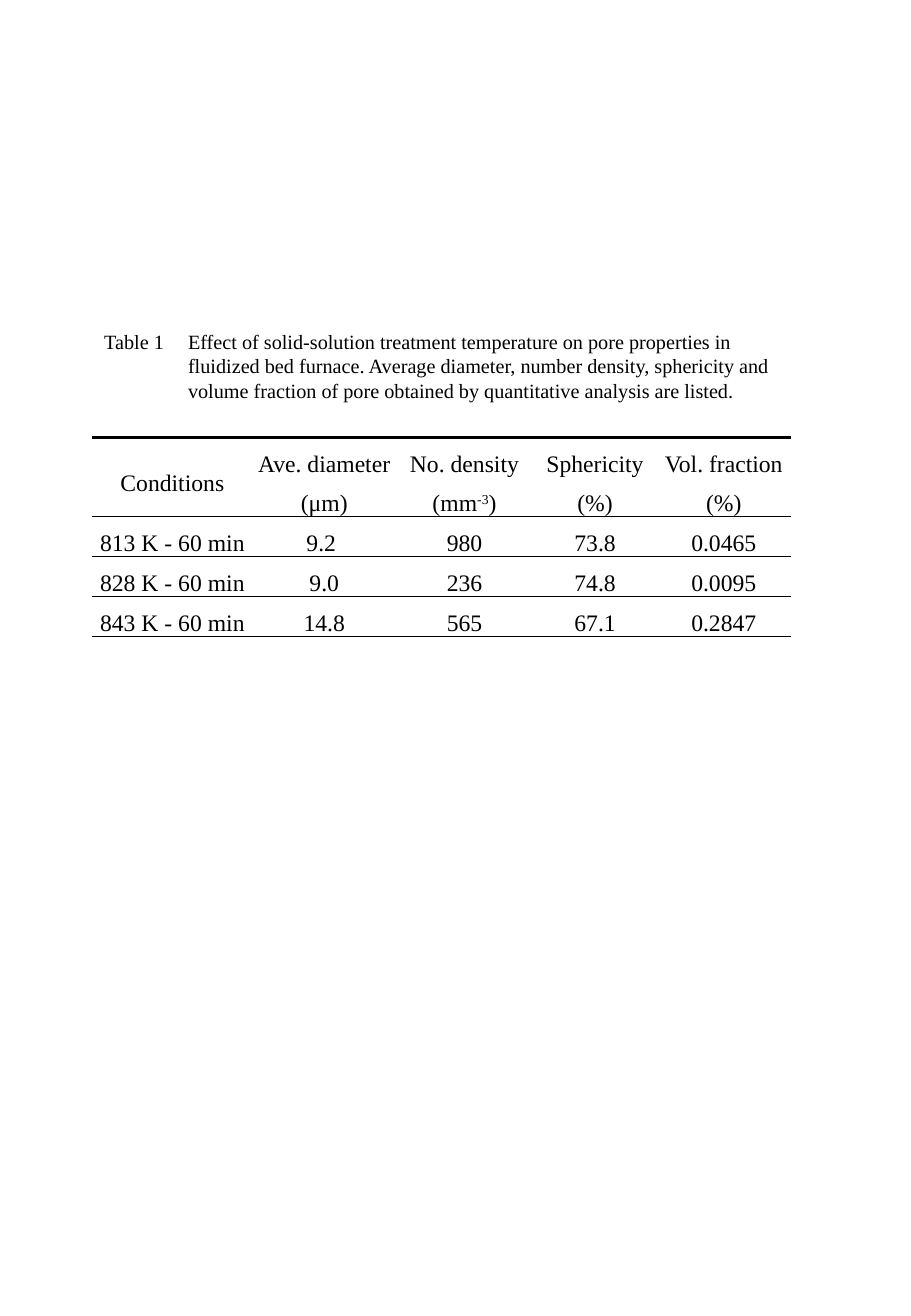
from lxml import etree
from pptx import Presentation
from pptx import util as u
from pptx.dml.color import RGBColor
from pptx.enum import text
from pptx.oxml import ns

FONT, BLACK = "Times New Roman", "000000"
CAPTION = ("Table 1\tEffect of solid-solution treatment temperature on pore properties in "
           "fluidized bed furnace. Average diameter, number density, sphericity and "
           "volume fraction of pore obtained by quantitative analysis are listed.")
ROWS = [
    ["Conditions", "Ave. diameter\n(μm)", "No. density\n(mm^-3^)", "Sphericity\n(%)", "Vol. fraction\n(%)"],
    ["813 K - 60 min", "9.2 ", "980", "73.8", "0.0465"],
    ["828 K - 60 min", "9.0", "236", "74.8", "0.0095"],
    ["843 K - 60 min", "14.8", "565", "67.1", "0.2847"],
]
COLUMN_WIDTHS = [1.32, 1.18, 1.13, 1.02, 1.1]
ROW_HEIGHTS = [0.65, 0.33, 0.33, 0.33]
LEFT, CAPTION_TOP, TABLE_TOP, HANGING = 0.76, 2.66, 3.6, 0.69


def color(hex_string):
    return RGBColor.from_string(hex_string)


def set_font(paragraph, size):
    paragraph.font.name = FONT
    paragraph.font.size = u.Pt(size)
    paragraph.font.color.rgb = color(BLACK)


def set_borders(cell, top, bottom):
    properties = cell._tc.get_or_add_tcPr()
    for position, (side, width) in enumerate([("L", 0), ("R", 0), ("T", top), ("B", bottom)]):
        line = etree.Element(ns.qn(f"a:ln{side}"), w=str(u.Pt(width)))
        if width:
            fill = etree.SubElement(line, ns.qn("a:solidFill"))
            etree.SubElement(fill, ns.qn("a:srgbClr"), val=BLACK)
        else:
            etree.SubElement(line, ns.qn("a:noFill"))
        properties.insert(position, line)


def write_cell(cell, content):
    cell.margin_left = cell.margin_right = cell.margin_top = u.Inches(0.01)
    cell.margin_bottom = 0
    cell.vertical_anchor = text.MSO_ANCHOR.MIDDLE
    cell.fill.background()
    paragraph = cell.text_frame.paragraphs[0]
    paragraph.alignment = text.PP_ALIGN.CENTER
    paragraph.line_spacing = u.Pt(23)
    set_font(paragraph, 14)
    for line_number, line in enumerate(content.split("\n")):
        if line_number:
            paragraph.add_line_break()
        for part_number, part in enumerate(line.split("^")):
            run = paragraph.add_run()
            run.text = part
            if part_number % 2:
                run._r.get_or_add_rPr().set("baseline", "30000")


presentation = Presentation()
presentation.slide_width, presentation.slide_height = u.Inches(7.5), u.Inches(10.83)
slide = presentation.slides.add_slide(presentation.slide_layouts[6])

table = slide.shapes.add_table(
    len(ROWS), len(COLUMN_WIDTHS), u.Inches(LEFT), u.Inches(TABLE_TOP),
    u.Inches(sum(COLUMN_WIDTHS)), u.Inches(sum(ROW_HEIGHTS))).table
table.first_row = table.horz_banding = False
for column, width in zip(table.columns, COLUMN_WIDTHS):
    column.width = u.Inches(width)
for row_number, (row, height, contents) in enumerate(zip(table.rows, ROW_HEIGHTS, ROWS)):
    row.height = u.Inches(height)
    for cell, content in zip(row.cells, contents):
        write_cell(cell, content)
        set_borders(cell, top=0.5 if row_number else 2, bottom=0.5)

caption = slide.shapes.add_textbox(
    u.Inches(LEFT), u.Inches(CAPTION_TOP), u.Inches(5.7), u.Inches(0.71)).text_frame
caption.word_wrap = True
caption.auto_size = text.MSO_AUTO_SIZE.SHAPE_TO_FIT_TEXT
paragraph = caption.paragraphs[0]
paragraph.text = CAPTION
set_font(paragraph, 12)
indent = paragraph._p.get_or_add_pPr()
indent.set("marL", str(u.Inches(HANGING)))
indent.set("indent", str(-u.Inches(HANGING)))

presentation.save("out.pptx")
